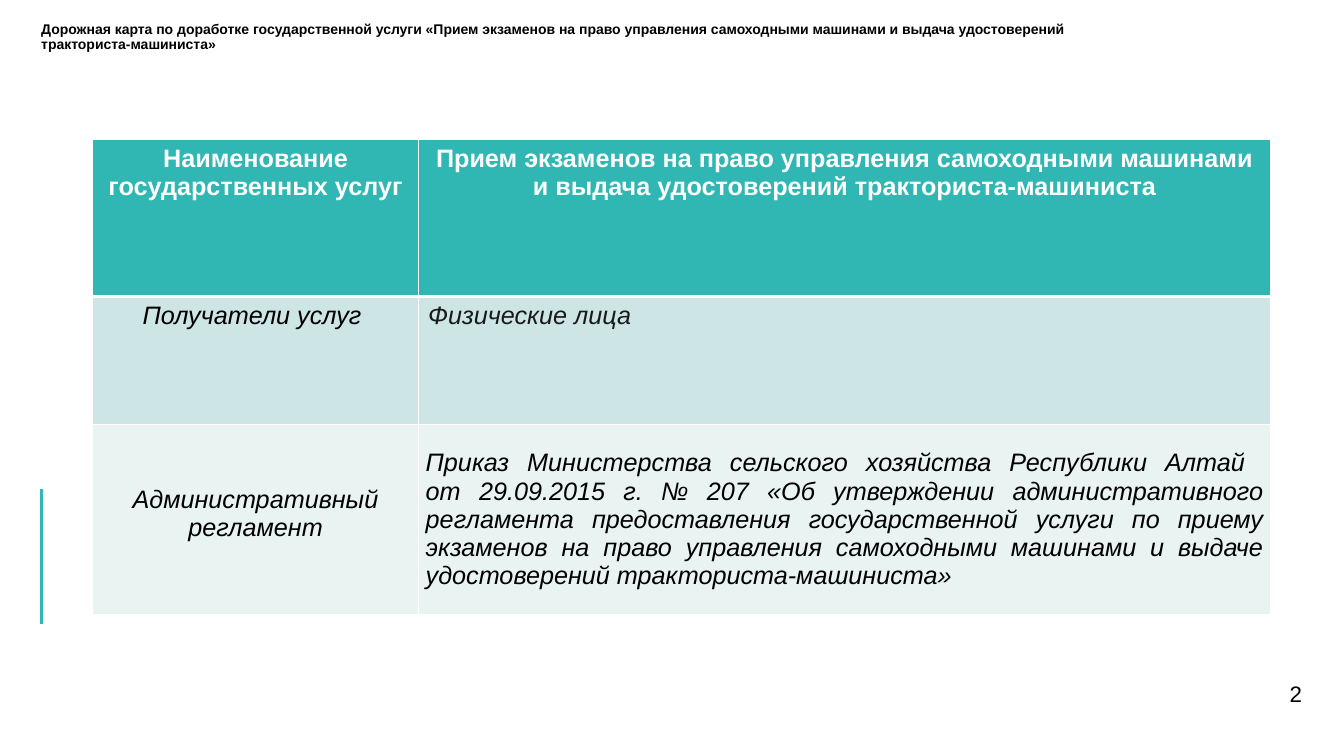
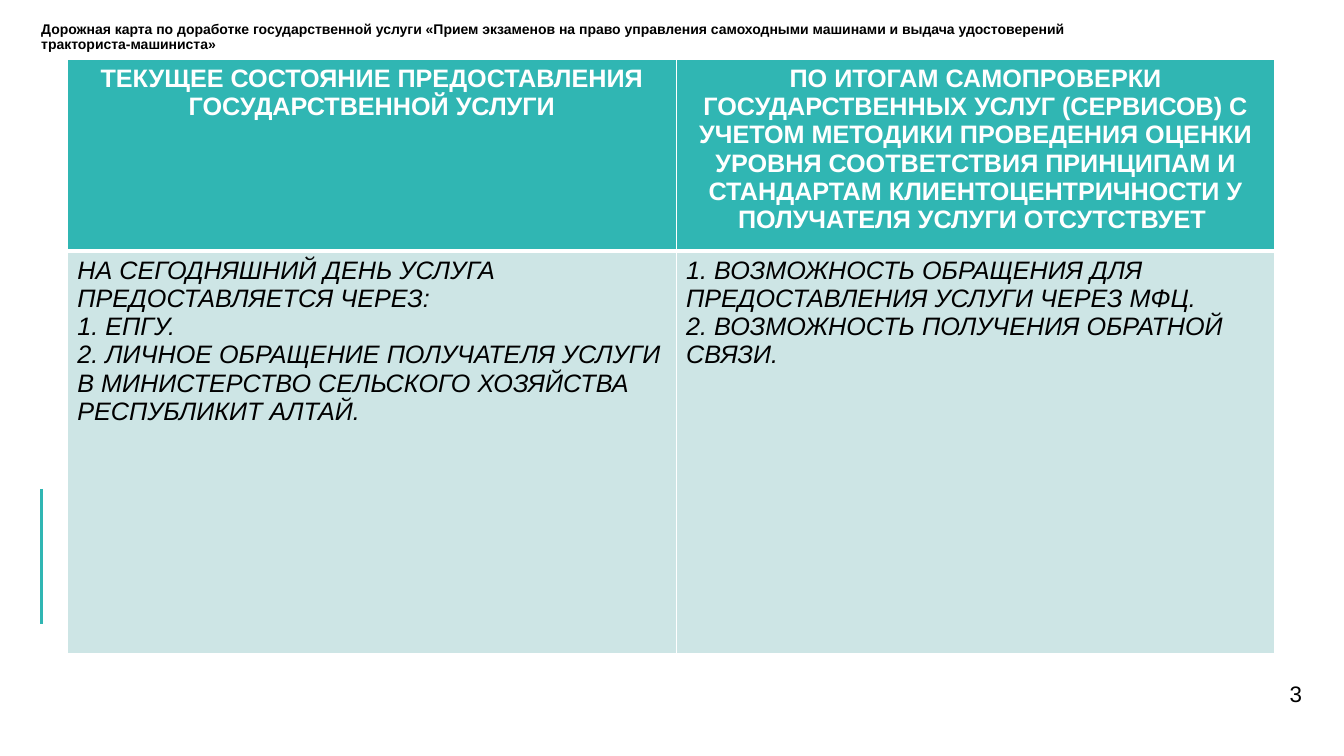
import dataclasses

import pptx
import pptx.dml.color
import pptx.enum.shapes
import pptx.enum.text
import pptx.oxml
import pptx.oxml.ns
import pptx.util
from pptx.util import Cm

ALIGN = pptx.enum.text.PP_ALIGN
ANCHOR = pptx.enum.text.MSO_ANCHOR


@dataclasses.dataclass(frozen=True)
class Theme:
    font: str = "Arial"
    accent: str = "30B6B3"
    band: str = "CDE5E5"
    light_band: str = "E8F3F2"
    white: str = "FFFFFF"
    black: str = "000000"
    soft_black: str = "1A1A1A"
    title_size: int = 10
    table_size: int = 18
    number_size: int = 16
    accent_width: float = 2.25
    border_width: int = 1
    header_border_width: int = 3


@dataclasses.dataclass(frozen=True)
class CellText:
    paragraphs: tuple
    align: ALIGN = ALIGN.LEFT
    anchor: ANCHOR = ANCHOR.TOP
    color: str = Theme.black
    margin_side: float = 0.25
    margin_top: float = 0.13


class Deck:
    def __init__(self, theme):
        self.theme = theme
        self.presentation = pptx.Presentation()
        self.presentation.slide_width = Cm(33.87)
        self.presentation.slide_height = Cm(19.05)
        self.slide = None

    def color(self, value):
        return pptx.dml.color.RGBColor.from_string(value)

    def start_slide(self, title, number):
        self.slide = self.presentation.slides.add_slide(self.presentation.slide_layouts[6])
        self.text_box(1.04, 0.56, 28.07, 0.99, title, self.theme.title_size,
                      bold=True, line_spacing=0.9)
        self.text_box(30.12, 16.92, 2.69, 1.09, str(number), self.theme.number_size,
                      align=ALIGN.RIGHT, anchor=ANCHOR.MIDDLE)
        self.accent_line(1.04, 12.32, 15.72)

    def add_runs(self, paragraph, text, size, color, bold=False, italic=False):
        for index, line in enumerate(text.split("\n")):
            if index:
                paragraph.add_line_break()
            run = paragraph.add_run()
            run.text = line
            run.font.name = self.theme.font
            run.font.size = pptx.util.Pt(size)
            run.font.bold = bold
            run.font.italic = italic
            run.font.color.rgb = self.color(color)

    def text_box(self, left, top, width, height, text, size, bold=False,
                 align=ALIGN.LEFT, anchor=ANCHOR.TOP, line_spacing=1.0):
        shape = self.slide.shapes.add_textbox(Cm(left), Cm(top), Cm(width), Cm(height))
        frame = shape.text_frame
        frame.word_wrap = True
        frame.vertical_anchor = anchor
        frame.margin_left = frame.margin_right = frame.margin_top = frame.margin_bottom = 0
        paragraph = frame.paragraphs[0]
        paragraph.alignment = align
        paragraph.line_spacing = line_spacing
        self.add_runs(paragraph, text, size, self.theme.black, bold)

    def accent_line(self, left, top, bottom):
        line = self.slide.shapes.add_connector(
            pptx.enum.shapes.MSO_CONNECTOR.STRAIGHT, Cm(left), Cm(top), Cm(left), Cm(bottom))
        line.line.color.rgb = self.color(self.theme.accent)
        line.line.width = pptx.util.Pt(self.theme.accent_width)
        line.element.spPr.append(pptx.oxml.parse_xml(
            f'<a:effectLst {pptx.oxml.ns.nsdecls("a")}/>'))

    def border(self, cell, side, width):
        cell._tc.get_or_add_tcPr().append(pptx.oxml.parse_xml(
            f'<a:ln{side} {pptx.oxml.ns.nsdecls("a")} w="{pptx.util.Pt(width)}">'
            f'<a:solidFill><a:srgbClr val="{self.theme.white}"/></a:solidFill></a:ln{side}>'))

    def fill_cell(self, cell, content, row):
        thin, thick = self.theme.border_width, self.theme.header_border_width
        header = row == 0
        self.border(cell, "L", thin)
        self.border(cell, "R", thin)
        self.border(cell, "T", thick if row == 1 else thin)
        self.border(cell, "B", thick if header else thin)
        cell.fill.solid()
        fills = (self.theme.accent, self.theme.band, self.theme.light_band)
        cell.fill.fore_color.rgb = self.color(fills[row])
        cell.vertical_anchor = content.anchor
        cell.margin_left = cell.margin_right = Cm(content.margin_side)
        cell.margin_top = Cm(content.margin_top)
        frame = cell.text_frame
        for index, text in enumerate(content.paragraphs):
            paragraph = frame.add_paragraph() if index else frame.paragraphs[0]
            paragraph.alignment = content.align
            self.add_runs(paragraph, text, self.theme.table_size, content.color,
                          bold=header, italic=not header)

    def table(self, left, top, widths, heights, headings, body):
        header = [CellText((heading,), ALIGN.CENTER, color=self.theme.white)
                  for heading in headings]
        rows = [header, *body]
        table = self.slide.shapes.add_table(
            len(heights), len(widths), Cm(left), Cm(top),
            Cm(sum(widths)), Cm(sum(heights))).table
        table.horz_banding = False
        for column, width in zip(table.columns, widths):
            column.width = Cm(width)
        for table_row, height in zip(table.rows, heights):
            table_row.height = Cm(height)
        for row, contents in enumerate(rows):
            for column, content in enumerate(contents):
                self.fill_cell(table.cell(row, column), content, row)


def service_passport(deck):
    deck.table(
        2.34, 3.51, (8.2, 21.49), (3.96, 3.23, 4.78),
        ("Наименование государственных услуг",
         "Прием экзаменов на право управления самоходными машинами "
         "и выдача удостоверений тракториста-машиниста"),
        [
            (CellText(("Получатели услуг ",), ALIGN.CENTER),
             CellText(("Физические лица",), color=deck.theme.soft_black)),
            (CellText(("Административный регламент",), ALIGN.CENTER, margin_top=1.54),
             CellText((
                 "Приказ Министерства сельского хозяйства Республики Алтай \n"
                 "от 29.09.2015 г. № 207 «Об утверждении административного регламента "
                 "предоставления государственной услуги по приему экзаменов на право "
                 "управления самоходными машинами и выдаче удостоверений "
                 "тракториста-машиниста»",), ALIGN.JUSTIFY, ANCHOR.MIDDLE,
                 margin_side=0.19)),
        ])


def current_state(deck):
    deck.table(
        1.7, 1.5, (15.34, 15.09), (4.5, 10.13),
        ("ТЕКУЩЕЕ СОСТОЯНИЕ ПРЕДОСТАВЛЕНИЯ ГОСУДАРСТВЕННОЙ УСЛУГИ",
         "ПО ИТОГАМ САМОПРОВЕРКИ ГОСУДАРСТВЕННЫХ УСЛУГ (СЕРВИСОВ) С УЧЕТОМ "
         "МЕТОДИКИ ПРОВЕДЕНИЯ ОЦЕНКИ УРОВНЯ СООТВЕТСТВИЯ ПРИНЦИПАМ И СТАНДАРТАМ "
         "КЛИЕНТОЦЕНТРИЧНОСТИ У ПОЛУЧАТЕЛЯ УСЛУГИ ОТСУТСТВУЕТ "),
        [
            (CellText((
                "НА СЕГОДНЯШНИЙ ДЕНЬ УСЛУГА ПРЕДОСТАВЛЯЕТСЯ ЧЕРЕЗ:",
                "1. ЕПГУ.",
                "2. ЛИЧНОЕ ОБРАЩЕНИЕ ПОЛУЧАТЕЛЯ УСЛУГИ В МИНИСТЕРСТВО СЕЛЬСКОГО "
                "ХОЗЯЙСТВА РЕСПУБЛИКИТ АЛТАЙ.")),
             CellText((
                 "1. ВОЗМОЖНОСТЬ ОБРАЩЕНИЯ ДЛЯ ПРЕДОСТАВЛЕНИЯ УСЛУГИ ЧЕРЕЗ МФЦ.",
                 "2. ВОЗМОЖНОСТЬ ПОЛУЧЕНИЯ ОБРАТНОЙ СВЯЗИ."))),
        ])


def main():
    deck = Deck(Theme())
    title = ("Дорожная карта по доработке государственной услуги «Прием экзаменов на право "
             "управления самоходными машинами и выдача удостоверений тракториста-машиниста»")
    for number, add_content in enumerate((service_passport, current_state), start=2):
        deck.start_slide(title, number)
        add_content(deck)
    deck.presentation.save("out.pptx")


if __name__ == "__main__":
    main()
